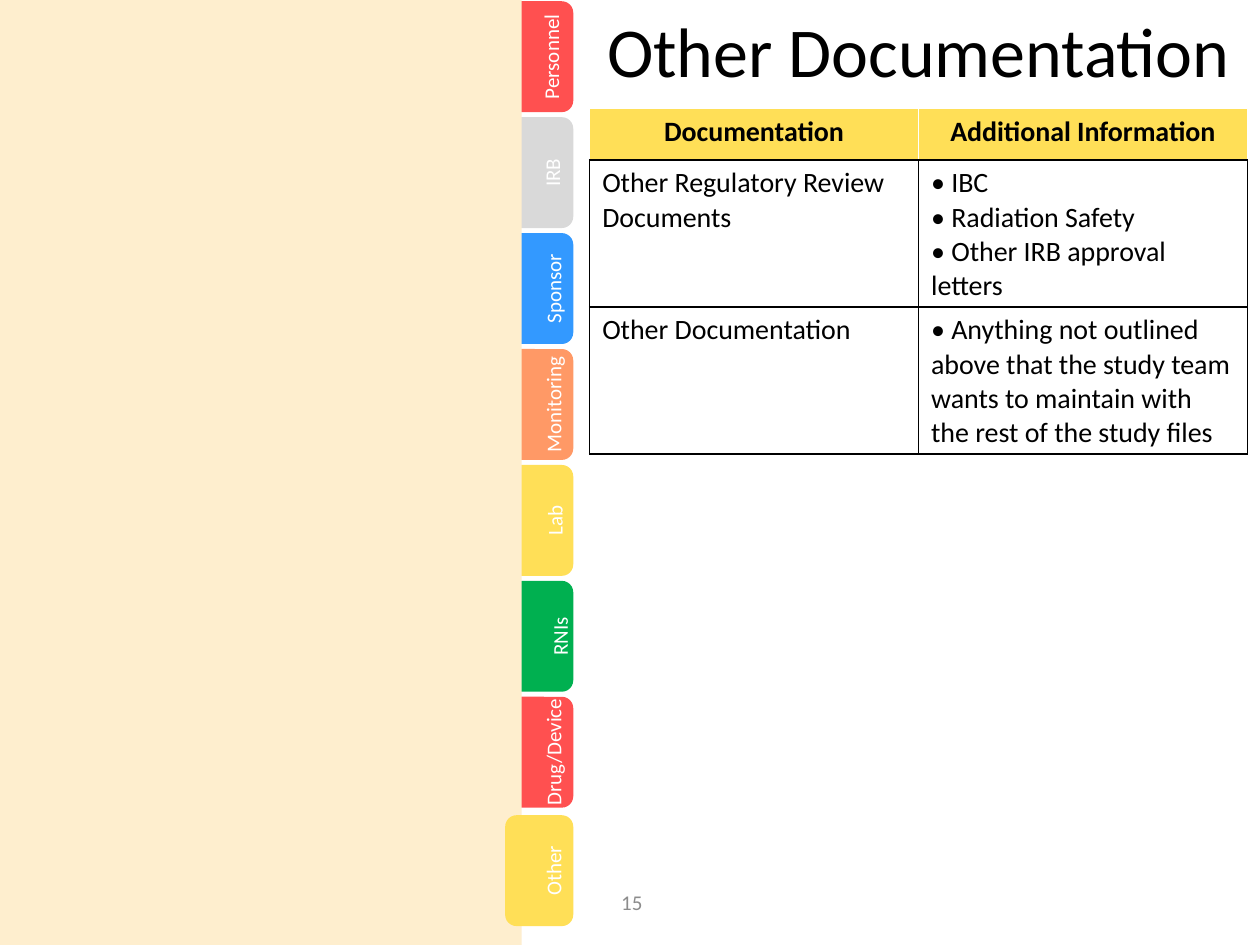
from dataclasses import dataclass

from lxml import etree
from pptx import Presentation
from pptx import util as u
from pptx.dml.color import RGBColor
from pptx.enum import shapes, text
from pptx.oxml import ns


@dataclass(frozen=True)
class Theme:
    font: str = "Calibri"
    title_size: int = 40
    table_size: int = 16
    small_size: int = 12
    black: str = "000000"
    white: str = "FFFFFF"
    grey: str = "8C8C8C"
    cream: str = "FEEECE"
    red: str = "FF5050"
    silver: str = "D9D9D9"
    blue: str = "3399FF"
    orange: str = "FF9966"
    yellow: str = "FFDF57"
    green: str = "00B050"


class SlideBuilder:
    """Places elements on a grid of 100 columns by 75 rows."""

    COLUMNS, ROWS = 100, 75

    def __init__(self, presentation, theme):
        self.theme = theme
        self.column = presentation.slide_width / self.COLUMNS
        self.row = presentation.slide_height / self.ROWS
        self.slide = presentation.slides.add_slide(presentation.slide_layouts[5])

    def box(self, left, top, width, height):
        return (u.Emu(round(left * self.column)), u.Emu(round(top * self.row)),
                u.Emu(round(width * self.column)), u.Emu(round(height * self.row)))

    def style(self, paragraph, size, color, align=text.PP_ALIGN.LEFT, bold=False):
        paragraph.alignment = align
        font = paragraph.font
        font.name, font.size, font.bold = self.theme.font, u.Pt(size), bold
        font.color.rgb = RGBColor.from_string(color)

    def title(self, words, *place):
        title = self.slide.shapes.title
        title.left, title.top, title.width, title.height = self.box(*place)
        frame = title.text_frame
        frame.text = words
        frame.auto_size = text.MSO_AUTO_SIZE.NONE
        frame.vertical_anchor = text.MSO_ANCHOR.TOP
        self.style(frame.paragraphs[0], self.theme.title_size, self.theme.black,
                   text.PP_ALIGN.CENTER)

    def block(self, kind, color, *place):
        shape = self.slide.shapes.add_shape(kind, *self.box(*place))
        shape.shadow.inherit = False
        shape.fill.solid()
        shape.fill.fore_color.rgb = RGBColor.from_string(color)
        shape.line.fill.background()

    def label(self, words, color, *place, rotation=0, wrap=True):
        shape = self.slide.shapes.add_textbox(*self.box(*place))
        shape.rotation = rotation
        frame = shape.text_frame
        frame.text = words
        frame.word_wrap = wrap
        frame.vertical_anchor = text.MSO_ANCHOR.MIDDLE
        self.style(frame.paragraphs[0], self.theme.small_size, color,
                   text.PP_ALIGN.CENTER)

    def borders(self, cell, colors):
        properties = cell._tc.get_or_add_tcPr()
        for side, color in zip("LRTB", colors):
            line = etree.SubElement(properties, ns.qn(f"a:ln{side}"), w=str(u.Pt(1)))
            fill = etree.SubElement(line, ns.qn("a:solidFill"))
            etree.SubElement(fill, ns.qn("a:srgbClr"), val=color)

    def table(self, rows, heights, left, top, width):
        theme = self.theme
        frame = self.slide.shapes.add_table(
            len(rows), len(rows[0]), *self.box(left, top, width, sum(heights)))
        table = frame.table
        table.horz_banding = False
        for r, (words, height) in enumerate(zip(rows, heights)):
            table.rows[r].height = u.Emu(round(height * self.row))
            header = r == 0
            side = theme.white if header else theme.black
            top_color = theme.white if header else theme.black
            for c, content in enumerate(words):
                cell = table.cell(r, c)
                cell.text = content
                self.borders(cell, (side, side, top_color, theme.black))
                if header:
                    cell.fill.solid()
                    cell.fill.fore_color.rgb = RGBColor.from_string(theme.yellow)
                else:
                    cell.fill.background()
                align = text.PP_ALIGN.CENTER if header else text.PP_ALIGN.LEFT
                for paragraph in cell.text_frame.paragraphs:
                    self.style(paragraph, theme.table_size, theme.black, align, header)


def main():
    presentation = Presentation()
    presentation.slide_width, presentation.slide_height = u.Inches(10), u.Inches(7.5)
    theme = Theme()
    builder = SlideBuilder(presentation, theme)
    tab_shape = shapes.MSO_SHAPE.ROUNDED_RECTANGLE

    # Binder tabs: name, colour, label length, label centre column
    tabs = [
        ("Personnel", theme.red, 8.8, 43.7),
        ("IRB", theme.silver, 4.3, 43.8),
        ("Sponsor", theme.blue, 7.6, 43.9),
        ("Monitoring", theme.orange, 9.7, 43.9),
        ("Lab", theme.yellow, 4.4, 44),
        ("RNIs", theme.green, 5.1, 44.4),
        ("Drug/Device", theme.red, 10.6, 43.9),
        ("Other", theme.yellow, 6, 43.9),
    ]
    tab_left, tab_width, tab_height, label_height = 40.1, 5.4, 8.8, 3
    tops = [0.1 + 9.2 * i for i in range(len(tabs))]
    tops[-1] += 0.2
    current = len(tabs) - 1

    def add_tab(i):
        builder.block(tab_shape, tabs[i][1], tab_left, tops[i], tab_width, tab_height)

    # The binder page covers every tab but the current one
    for i in range(current):
        add_tab(i)
    builder.block(shapes.MSO_SHAPE.RECTANGLE, theme.cream, 0, 0, 41.4, builder.ROWS)
    add_tab(current)

    for (name, _, length, centre), top in zip(tabs, tops):
        middle = top + tab_height / 2
        builder.label(name, theme.white, centre - length / 2, middle - label_height / 2,
                      length, label_height, rotation=270, wrap=False)

    # Title and page number
    builder.title("Other Documentation", 45.8, 0.1, 54.2, 7.7)
    builder.label("15", theme.grey, 46.8, 69.6, 6.7, 4)

    # Documentation table
    builder.table([
        ("Documentation", "Additional Information"),
        ("Other Regulatory Review Documents",
         "• IBC\n• Radiation Safety\n• Other IRB approval letters"),
        ("Other Documentation",
         "• Anything not outlined above that the study team wants to maintain "
         "with the rest of the study files"),
    ], (4.1, 11.65, 11.65), 46.8, 8.6, 52.2)

    presentation.save("out.pptx")


if __name__ == "__main__":
    main()
